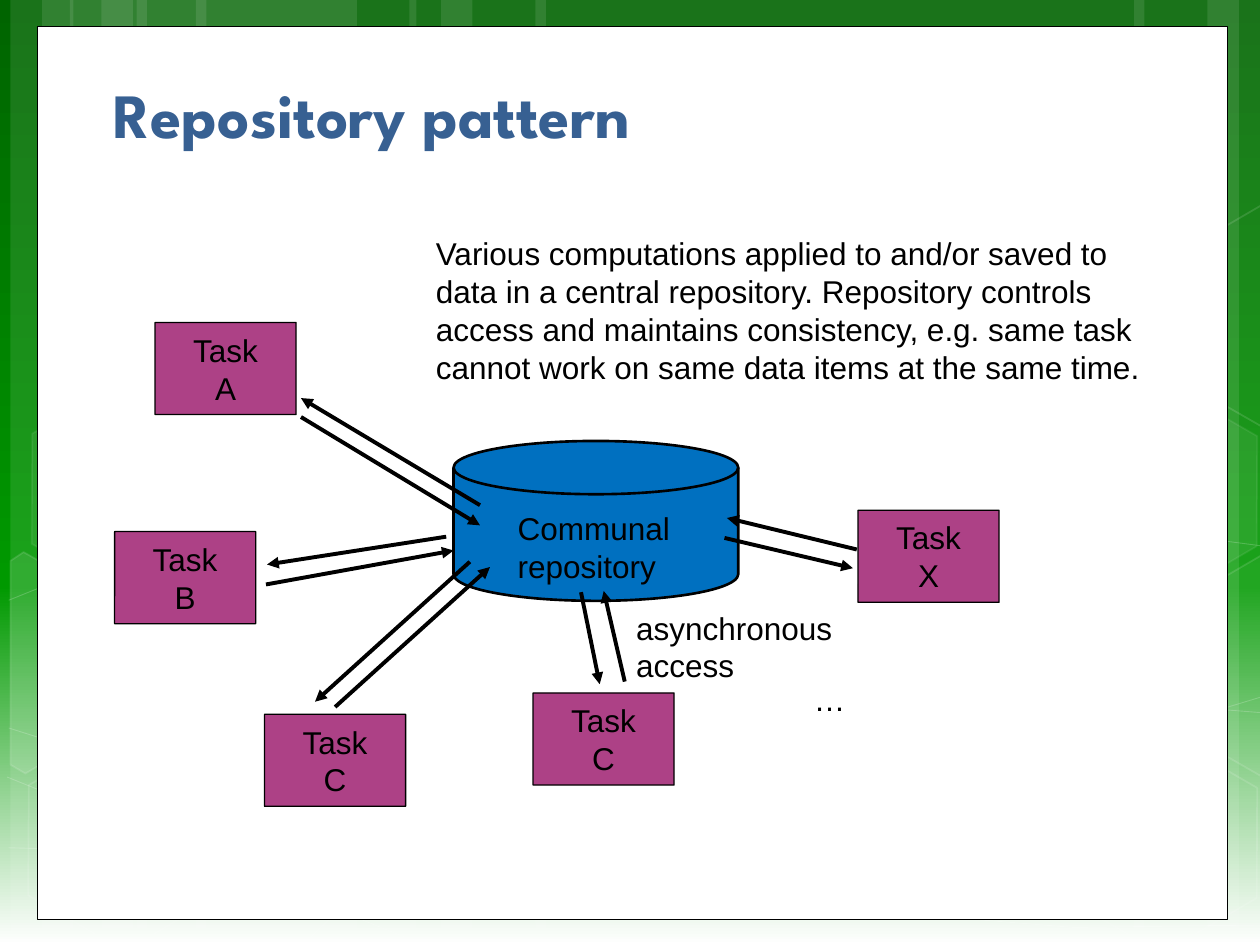
from copy import deepcopy
from typing import NamedTuple, Optional

from lxml import etree
from pptx import Presentation
from pptx.dml.color import RGBColor
from pptx.enum.shapes import MSO_CONNECTOR, MSO_SHAPE
from pptx.enum.text import MSO_ANCHOR, MSO_AUTO_SIZE, PP_ALIGN
from pptx.oxml.ns import qn
from pptx.util import Pt

STRAIGHT = MSO_CONNECTOR.STRAIGHT
RECTANGLE = MSO_SHAPE.RECTANGLE
ROUNDED = MSO_SHAPE.ROUNDED_RECTANGLE
HEXAGON = MSO_SHAPE.HEXAGON
DISK = MSO_SHAPE.FLOWCHART_MAGNETIC_DISK
COLORS = {
    "dark_green": "006400", "green": "009900", "white": "FFFFFF",
    "black": "000000", "title": "376092", "repository": "0070C0", "task": "AD4186",
}
TASK_WIDTH, TASK_HEIGHT = 80.6, 52.6


class Stripe(NamedTuple):
    left: float
    width: float


class Hexagon(NamedTuple):
    left: float
    top: float
    fill_alpha: Optional[int]
    line_alpha: int


class Outline(NamedTuple):
    points: list
    closed: bool
    fill_alpha: Optional[int]
    line_alpha: int
    line_width: float


class Task(NamedTuple):
    name: str
    left: float
    top: float


class Arrow(NamedTuple):
    start: tuple
    end: tuple


class Label(NamedTuple):
    text: str
    left: float
    top: float
    width: float
    height: float
    wrap: bool


STRIPES = [
    Stripe(78, 126), Stripe(6, 36), Stripe(24, 60), Stripe(112, 126),
    Stripe(40, 36), Stripe(58, 60), Stripe(528, 126), Stripe(690, 36),
    Stripe(648, 60), Stripe(306, 222), Stripe(234, 36), Stripe(252, 60),
]
OUTLINES = [
    Outline([(5, 484.5), (137, 488), (330, 479), (570, 444), (725, 397)], False, None, 20, 0.5),
    Outline([(5, 343), (87, 310), (250, 279), (471, 279), (725, 312.5)], False, None, 20, 0.5),
    Outline([(4, 444), (240, 539)], False, None, 20, 0.5),
    Outline([(5, 416), (92, 443.5), (257, 484.5), (452, 517), (614, 530), (725, 528.5)],
            False, None, 20, 0.5),
    Outline([(174, 539), (217, 497.5), (279, 460), (338, 438.5), (438, 416), (572, 404.5),
             (686, 404.5), (724, 407.5)], False, None, 20, 0.5),
    Outline([(6, 320.5), (13.5, 315.5), (69, 347), (68.5, 410.5), (14.5, 442), (6, 437)],
            True, 10, 12, 1),
    Outline([(666.5, 349), (720.5, 317.5), (726.5, 321), (726.5, 441.5), (721.5, 444),
             (666.5, 412.5)], True, 4, 12, 1),
    Outline([(666.5, 149), (720.5, 117.5), (727, 121), (726.5, 241), (721.5, 244),
             (666.5, 212.5)], True, None, 12, 1),
]
HEXAGONS = [
    Hexagon(8, 425.5, None, 12), Hexagon(10, 224.6, 7, 8),
    Hexagon(600.5, 427, None, 12), Hexagon(600.5, 226, 7, 8),
]
TASKS = [
    Task("A", 88.6, 184.3), Task("C", 151.2, 408.2), Task("X", 490.3, 291.6),
    Task("B", 65.5, 303.8), Task("C", 304.6, 396),
]
ARROWS = [
    Arrow((268.5, 321), (180, 401)), Arrow((191.5, 404), (280, 324)),
    Arrow((172, 238.3), (274.3, 300.2)), Arrow((274.3, 288.7), (172, 227.5)),
    Arrow((255, 306.7), (152.6, 322.6)), Arrow((152, 334), (259.2, 314.6)),
    Arrow((332, 338.4), (342.7, 391)), Arrow((357, 389.5), (345, 337.7)),
    Arrow((489.6, 314), (415.4, 296)), Arrow((414, 307.4), (487.4, 324.7)),
]
LABELS = [
    Label("Various computations applied to and/or saved to data in a central repository. "
          "Repository controls access and maintains consistency, e.g. same task cannot work "
          "on same data items at the same time.", 242, 130.3, 429, 94.3, True),
    Label("Communal repository", 288.7, 287.3, 108, 51, True),
    Label("…", 458, 385.2, 32.4, 29, False),
    Label("asynchronous\naccess", 356.4, 344.2, 129.6, 51, False),
]


def color(name: str) -> RGBColor:
    return RGBColor.from_string(COLORS[name])


def paint(shape, fill: Optional[str], line: Optional[str], width: float = 0) -> None:
    shape.shadow.inherit = False
    if fill:
        shape.fill.solid()
        shape.fill.fore_color.rgb = color(fill)
    else:
        shape.fill.background()
    if line:
        shape.line.color.rgb = color(line)
        shape.line.width = Pt(width)
    else:
        shape.line.fill.background()


def set_alpha(shape, location: str, percent: int) -> None:
    for element in shape.element.spPr.xpath(f"{location}/a:srgbClr"):
        etree.SubElement(element, qn("a:alpha"), val=str(percent * 1000))


def paint_faint(shape, fill_alpha: Optional[int], line_alpha: int, width: float) -> None:
    paint(shape, "white" if fill_alpha else None, "white", width)
    if fill_alpha:
        set_alpha(shape, "a:solidFill", fill_alpha)
    set_alpha(shape, "a:ln/a:solidFill", line_alpha)


def add_block(slide, kind, left: float, top: float, width: float, height: float):
    return slide.shapes.add_shape(kind, Pt(left), Pt(top), Pt(width), Pt(height))


def format_text(text_frame, size: float, font: str, color_name: str, alignment) -> None:
    for paragraph in text_frame.paragraphs:
        paragraph.alignment = alignment
        for run in paragraph.runs:
            run.font.size = Pt(size)
            run.font.name = font
            run.font.color.rgb = color(color_name)


def fill_background(slide) -> None:
    fill = slide.background.fill
    fill.gradient()
    fill.gradient_angle = 270
    first = fill.gradient_stops[0]
    stop_list = slide.element.find(".//" + qn("a:gsLst"))
    stop_list.insert(1, deepcopy(stop_list[0]))
    for stop, name, position in zip(fill.gradient_stops, ("dark_green", "green", "white"),
                                    (0, 0.62, 1)):
        stop.color.rgb = color(name)
        stop.position = position


def draw_stripe(slide, stripe: Stripe) -> None:
    shape = add_block(slide, RECTANGLE, stripe.left, 0, stripe.width, 540)
    paint(shape, "white", None)
    set_alpha(shape, "a:solidFill", 10)


def draw_outline(slide, outline: Outline) -> None:
    points = [(Pt(x), Pt(y)) for x, y in outline.points]
    builder = slide.shapes.build_freeform(*points[0])
    builder.add_line_segments(points[1:], close=outline.closed)
    shape = builder.convert_to_shape()
    paint_faint(shape, outline.fill_alpha, outline.line_alpha, outline.line_width)


def draw_hexagon(slide, hexagon: Hexagon) -> None:
    shape = add_block(slide, HEXAGON, hexagon.left, hexagon.top, 126, 109.4)
    shape.adjustments[0] = 0.285
    shape.rotation = 30
    paint_faint(shape, hexagon.fill_alpha, hexagon.line_alpha, 1)


def draw_task(slide, task: Task) -> None:
    shape = add_block(slide, ROUNDED, task.left, task.top, TASK_WIDTH, TASK_HEIGHT)
    shape.adjustments[0] = 0.003
    paint(shape, "task", "black", 0.75)
    text_frame = shape.text_frame
    text_frame.text = f"Task\n{task.name}"
    text_frame.word_wrap = False
    text_frame.vertical_anchor = MSO_ANCHOR.MIDDLE
    format_text(text_frame, 18, "Arial", "black", PP_ALIGN.CENTER)


def draw_arrow(slide, arrow: Arrow) -> None:
    ends = [Pt(value) for value in arrow.start + arrow.end]
    connector = slide.shapes.add_connector(STRAIGHT, *ends)
    connector.line.color.rgb = color("black")
    connector.line.width = Pt(2.25)
    properties = connector.element.spPr
    etree.SubElement(properties.find(qn("a:ln")), qn("a:tailEnd"), type="triangle")
    etree.SubElement(properties, qn("a:effectLst"))


def draw_label(slide, label: Label) -> None:
    box = slide.shapes.add_textbox(Pt(label.left), Pt(label.top), Pt(label.width), Pt(label.height))
    text_frame = box.text_frame
    text_frame.text = label.text
    text_frame.word_wrap = label.wrap
    text_frame.auto_size = MSO_AUTO_SIZE.SHAPE_TO_FIT_TEXT
    format_text(text_frame, 18, "Arial", "black", PP_ALIGN.LEFT)


def draw_title(slide) -> None:
    title = slide.shapes.title
    title.left, title.top, title.width, title.height = Pt(57.6), Pt(35.3), Pt(606.2), Pt(54.7)
    text_frame = title.text_frame
    text_frame.text = "Repository pattern"
    text_frame.vertical_anchor = MSO_ANCHOR.BOTTOM
    text_frame.auto_size = MSO_AUTO_SIZE.NONE
    format_text(text_frame, 36, "League Spartan", "title", PP_ALIGN.LEFT)
    text_frame.paragraphs[0].runs[0].font.bold = True
    slide.shapes.element.append(title.element)


def main() -> None:
    presentation = Presentation()
    presentation.slide_width, presentation.slide_height = Pt(720), Pt(540)
    slide = presentation.slides.add_slide(presentation.slide_layouts[5])
    fill_background(slide)
    for draw, items in ((draw_stripe, STRIPES), (draw_outline, OUTLINES), (draw_hexagon, HEXAGONS)):
        for item in items:
            draw(slide, item)
    paint(add_block(slide, RECTANGLE, 21.6, 15.1, 679.7, 510.5), "white", "black", 0.5)
    draw_title(slide)
    paint(add_block(slide, DISK, 259.2, 252, 162.7, 91.4), "repository", "black", 1.5)
    for draw, items in ((draw_task, TASKS), (draw_arrow, ARROWS), (draw_label, LABELS)):
        for item in items:
            draw(slide, item)
    presentation.save("out.pptx")


if __name__ == "__main__":
    main()
